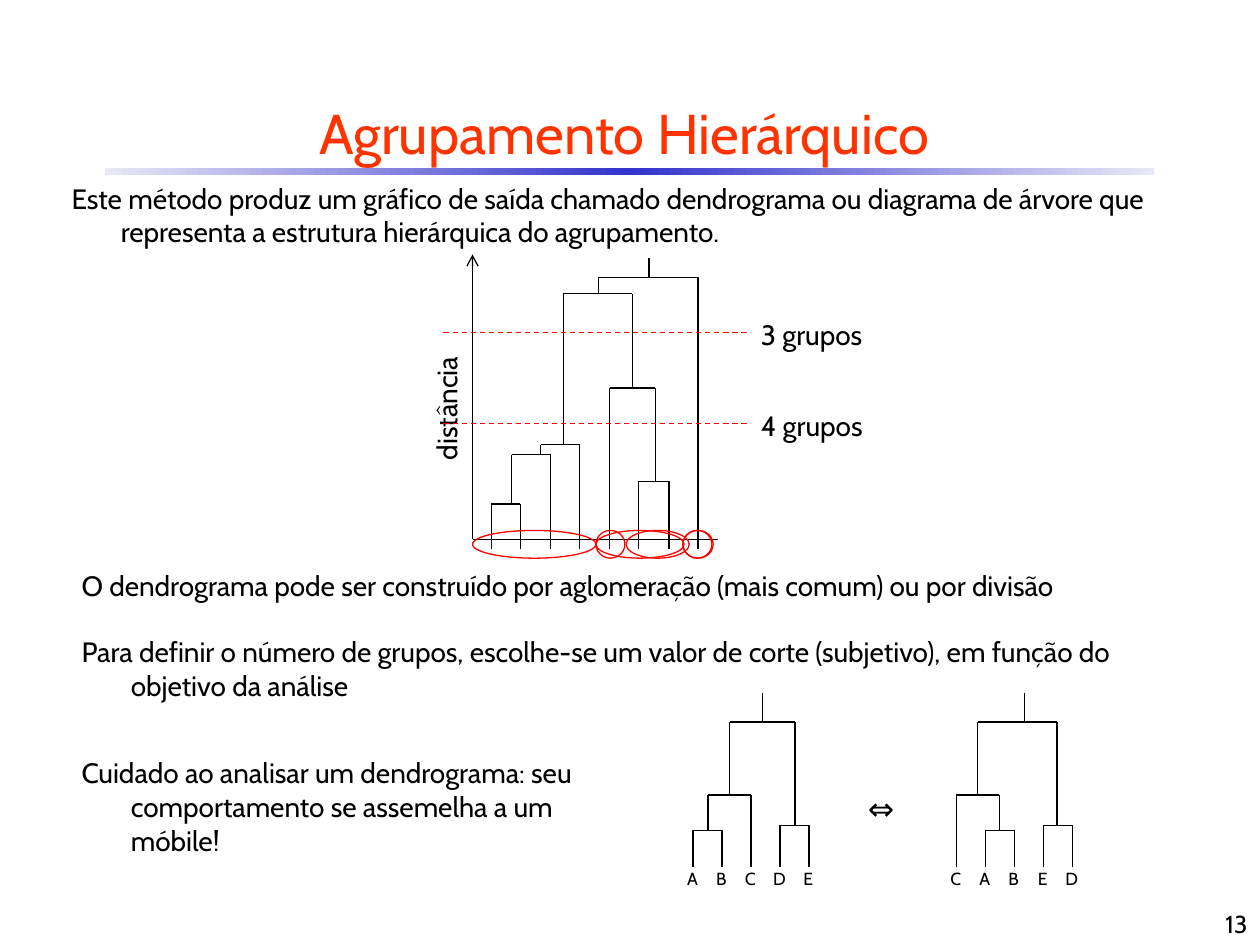
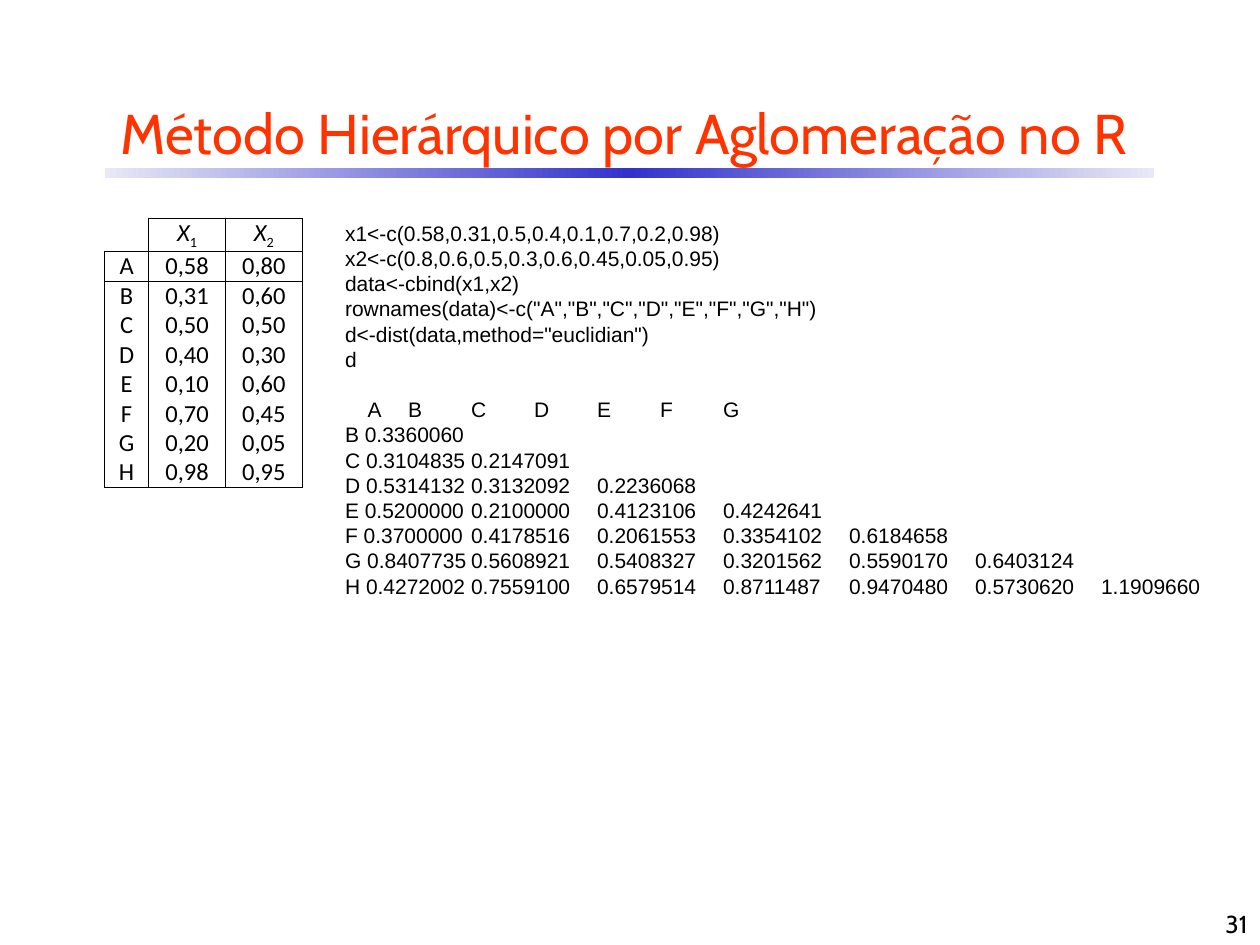
from copy import deepcopy

from lxml import etree
from pptx import Presentation
from pptx.dml.color import RGBColor
from pptx.enum.dml import MSO_LINE
from pptx.enum.shapes import MSO_CONNECTOR, MSO_SHAPE
from pptx.enum.text import MSO_ANCHOR, PP_ALIGN
from pptx.oxml.ns import qn
from pptx.util import Emu, Pt

RECT, OVAL = MSO_SHAPE.RECTANGLE, MSO_SHAPE.OVAL
STRAIGHT, DASH = MSO_CONNECTOR.STRAIGHT, MSO_LINE.DASH
LEFT, CENTER, RIGHT = PP_ALIGN.LEFT, PP_ALIGN.CENTER, PP_ALIGN.RIGHT
TOP, MIDDLE, BOTTOM = MSO_ANCHOR.TOP, MSO_ANCHOR.MIDDLE, MSO_ANCHOR.BOTTOM

BLACK = RGBColor(0, 0, 0)
WHITE = RGBColor(255, 255, 255)
RED = RGBColor(255, 0, 0)
ORANGE = RGBColor(0xFF, 0x33, 0x00)
PALE = RGBColor(0xE8, 0xE8, 0xF6)
BLUE = RGBColor(0x33, 0x33, 0xCC)

HEAD, CODE, GRID = "Cabin", "Arial", "Calibri"
SCALE = 9144
HANG = 39
PLAIN = "{2D5ABB26-0587-4C30-8999-92F81FD0307C}"

SOURCE = """x1<-c(0.58,0.31,0.5,0.4,0.1,0.7,0.2,0.98)
x2<-c(0.8,0.6,0.5,0.3,0.6,0.45,0.05,0.95)
data<-cbind(x1,x2)
rownames(data)<-c("A","B","C","D","E","F","G","H")
d<-dist(data,method="euclidian")
d""".split("\n")
DISTS = """B 0.3360060
C 0.3104835 0.2147091
D 0.5314132 0.3132092 0.2236068
E 0.5200000 0.2100000 0.4123106 0.4242641
F 0.3700000 0.4178516 0.2061553 0.3354102 0.6184658
G 0.8407735 0.5608921 0.5408327 0.3201562 0.5590170 0.6403124
H 0.4272002 0.7559100 0.6579514 0.8711487 0.9470480 0.5730620 1.1909660""".split("\n")
POINTS = [
    ("A", "0,58", "0,80"), ("B", "0,31", "0,60"), ("C", "0,50", "0,50"),
    ("D", "0,40", "0,30"), ("E", "0,10", "0,60"), ("F", "0,70", "0,45"),
    ("G", "0,20", "0,05"), ("H", "0,98", "0,95"),
]

# Tree nodes: (stem x, join y, left child, right child); a number is a leaf.
MAIN = (140, 15,
        (100, 28, (72, 148, (54, 156, (31, 195, 0, 1), 2), 3),
         (127, 103, 4, (145, 177, 5, 6))),
        7)
FIRST = (55, 23, (29, 81, (12, 109, 0, 1), 2), (81, 105, 3, 4))
SECOND = (54, 23, (17, 81, 0, (34, 109, 1, 2)), (80, 105, 3, 4))


def px(*vals):
    return [Emu(round(v * SCALE)) for v in vals]


def style(para, size, face=HEAD, color=BLACK, align=LEFT):
    para.font.size = Pt(size)
    para.font.name = face
    para.font.color.rgb = color
    para.alignment = align


def indent(para, margin, first):
    props = para._p.get_or_add_pPr()
    props.set("marL", str(margin * SCALE))
    props.set("indent", str(first * SCALE))


def write(slide, box, lines, size=16, face=HEAD, align=LEFT, anchor=TOP, hang=0):
    shape = slide.shapes.add_textbox(*px(*box))
    frame = shape.text_frame
    frame.word_wrap = True
    frame.vertical_anchor = anchor
    frame.text = "\n".join(lines)
    for para in frame.paragraphs:
        style(para, size, face, align=align)
        if hang:
            indent(para, hang, -hang)
    return shape


def line(slide, x1, y1, x2, y2, color=BLACK):
    link = slide.shapes.add_connector(STRAIGHT, *px(x1, y1, x2, y2))
    link.line.color.rgb = color
    link.line.width = Pt(0.75)
    etree.SubElement(link._element.spPr, qn("a:effectLst"))
    return link


def ring(slide, x, y, wide):
    shape = slide.shapes.add_shape(OVAL, *px(x, y, wide, 22))
    shape.shadow.inherit = False
    shape.fill.background()
    shape.line.color.rgb = RED
    shape.line.width = Pt(0.75)


def branch(slide, left, top, node, leaves, base):
    if isinstance(node, int):
        return left + leaves[node], base
    stem, join, *kids = node
    ends = [branch(slide, left, top, kid, leaves, base) for kid in kids]
    for x, y in ends:
        line(slide, x, y, x, top + join)
    line(slide, ends[0][0], top + join, ends[1][0], top + join)
    return left + stem, top + join


def tree(slide, left, top, node, leaves, base):
    x, y = branch(slide, left, top, node, leaves, base)
    line(slide, x, y, x, top)


def band(slide, layout):
    shape = slide.shapes.add_shape(RECT, *px(83, 133, 833, 8))
    shape.shadow.inherit = False
    shape.line.fill.background()
    shape.fill.gradient()
    shape.fill.gradient_angle = 0
    stops = shape._element.spPr.find(".//" + qn("a:gsLst"))
    stops.insert(1, deepcopy(stops[0]))
    for stop, spot, color in zip(shape.fill.gradient_stops, (0, 0.5, 1), (PALE, BLUE, PALE)):
        stop.position = spot
        stop.color.rgb = color
    layout.shapes._spTree.insert(2, shape._element)


def start(deck, layout, title, number):
    slide = deck.slides.add_slide(layout)
    head = slide.shapes.title
    head.left, head.top, head.width, head.height = px(33, 67, 925, 75)
    head.text_frame.text = title
    head.text_frame.vertical_anchor = MIDDLE
    style(head.text_frame.paragraphs[0], 32, color=ORANGE, align=CENTER)
    write(slide, (792, 700, 208, 50), [number], 14, align=RIGHT, anchor=BOTTOM)
    return slide


def plot(slide, left, top):
    base = top + 226
    leaves = [15 + round(164 * i / 7) for i in range(8)]
    axis = line(slide, left, base, left, top)
    etree.SubElement(axis.line._get_or_add_ln(), qn("a:tailEnd"), type="arrow")
    line(slide, left, base, left + 195, base)
    for x in leaves:
        line(slide, left + x, base - 2, left + x, base + 8)
    tree(slide, left, top + 3, MAIN, leaves, base)
    write(slide, (left - 74, top + 101, 107, 37), ["distância"]).rotation = 270
    cuts = [
        ("3 grupos", 62, [(98, 70), (167, 24)]),
        ("4 grupos", 134, [(0, 98), (98, 23), (167, 23), (122, 50)]),
    ]
    for name, y, rings in cuts:
        line(slide, left - 23, top + y, left + 219, top + y, RED).line.dash_style = DASH
        write(slide, (left + 219, top + y - 17, 110, 37), [name])
        for x, wide in rings:
            ring(slide, left + x, top + 219, wide)


def mobile(slide, left, top, node, names):
    leaves = [23 * i for i in range(len(names))]
    tree(slide, left, top, node, leaves, top + 138)
    for x, name in zip(leaves, names):
        label = write(slide, (left + x - 15, top + 134, 29, 27), [name], 10, align=CENTER)
        label.text_frame.margin_left = label.text_frame.margin_right = 0


def theory(slide):
    intro = write(slide, (47, 139, 922, 64), [
        "Este método produz um gráfico de saída chamado dendrograma ou diagrama "
        "de árvore que representa a estrutura hierárquica do agrupamento."], hang=HANG)
    intro.fill.solid()
    intro.fill.fore_color.rgb = WHITE
    notes = write(slide, (55, 446, 914, 118), [
        "O dendrograma pode ser construído por aglomeração (mais comum) ou por divisão",
        "Para definir o número de grupos, escolhe-se um valor de corte (subjetivo), "
        "em função do objetivo da análise"], hang=HANG)
    notes.text_frame.paragraphs[1].space_before = Pt(19)
    plot(slide, 375, 202)
    mobile(slide, 550, 550, FIRST, "ABCDE")
    mobile(slide, 759, 550, SECOND, "CABED")
    write(slide, (679, 621, 63, 40), ["⇔"], 18)
    write(slide, (55, 595, 421, 91), [
        "Cuidado ao analisar um dendrograma: seu comportamento se assemelha "
        "a um móbile!"], hang=HANG)


def edge(cell, sides):
    props = cell._tc.get_or_add_tcPr()
    for spot, side in enumerate(sides):
        rule = etree.Element(qn("a:ln" + side), w=str(Pt(0.5)))
        fill = etree.SubElement(rule, qn("a:solidFill"))
        etree.SubElement(fill, qn("a:srgbClr"), val=str(BLACK))
        props.insert(spot, rule)


def table(slide, left, top):
    rows = [("", "X1", "X2")] + POINTS
    last = len(rows) - 1
    grid = slide.shapes.add_table(len(rows), 3, *px(left, top, 156, 212)).table
    grid._tbl.tblPr[0].text = PLAIN
    for col, wide in zip(grid.columns, px(35, 61, 61)):
        col.width = wide
    for r, row in enumerate(rows):
        grid.rows[r].height = px(23 if r else 25)[0]
        for c, text in enumerate(row):
            cell = grid.cell(r, c)
            cell.margin_left = cell.margin_right = cell.margin_top = cell.margin_bottom = 0
            cell.vertical_anchor = BOTTOM if r else MIDDLE
            cell.fill.background()
            para = cell.text_frame.paragraphs[0]
            style(para, 14, GRID, align=CENTER)
            if r:
                para.text = text
            elif text:
                name, sub = para.add_run(), para.add_run()
                name.text, sub.text = text
                name.font.italic = True
                sub.font._element.set("baseline", "-25000")
            sides = ["L", "R"] if r or c else ["R"]
            if r == 1 or (r == 0 and c):
                sides.append("T")
            if r in (0, last):
                sides.append("B")
            edge(cell, sides)


def code(slide, box):
    header = "\t".join("ABCDEFG")
    body = []
    for row in DISTS:
        name, *vals = row.split()
        body.append(name + " " + "\t".join(vals))
    shape = write(slide, box, SOURCE + [header] + body, 12, CODE)
    paras = shape.text_frame.paragraphs
    for para in paras:
        para.line_spacing = Pt(14.4)
    first = paras[len(SOURCE)]
    first.space_before = Pt(14.4)
    indent(first, 0, 18)


def main():
    deck = Presentation()
    deck.slide_width, deck.slide_height = px(1000, 750)
    layout = deck.slide_layouts[5]
    slide = start(deck, layout, "Agrupamento Hierárquico", "13")
    band(slide, layout)
    theory(slide)
    slide = start(deck, layout, "Método Hierárquico por Aglomeração no R", "31")
    table(slide, 83, 173)
    code(slide, (264, 170, 728, 313))
    deck.save("out.pptx")


if __name__ == "__main__":
    main()
